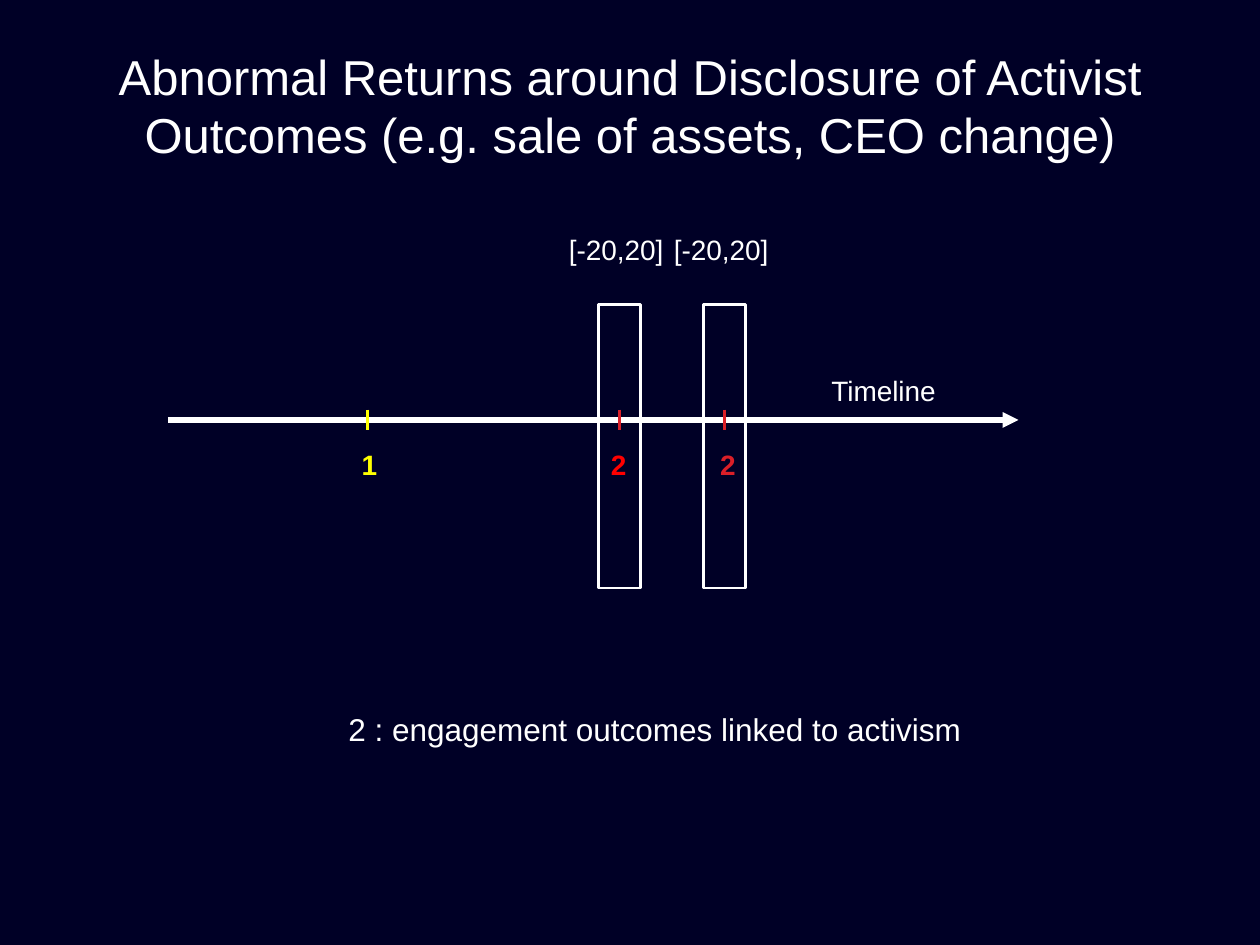
from lxml.etree import SubElement
from pptx import Presentation
from pptx.dml.color import RGBColor
from pptx.enum.shapes import MSO_CONNECTOR, MSO_SHAPE
from pptx.enum.text import MSO_ANCHOR, MSO_AUTO_SIZE, PP_ALIGN
from pptx.oxml.ns import qn
from pptx.util import Inches, Pt

COLORS = {"background": "000026", "white": "FFFFFF", "yellow": "FFFF00",
          "red": "FF0000", "crimson": "DA1F28"}
FONT = "Arial"


def grid(n):
    """Length of n grid units; the slide is 120 columns by 90 rows."""
    return Inches(n / 12)


def rgb(name):
    return RGBColor.from_string(COLORS[name])


def format_text(tf, text, size=16, color="white", bold=False, align=PP_ALIGN.LEFT):
    p = tf.paragraphs[0]
    p.alignment = align
    r = p.add_run()
    r.text = text
    r.font.name = FONT
    r.font.size = Pt(size)
    r.font.bold = bold
    r.font.color.rgb = rgb(color)


def add_text(s, text, x, y, w, h=4.4, wrap=False, **fmt):
    tf = s.shapes.add_textbox(*map(grid, (x, y, w, h))).text_frame
    tf.word_wrap = wrap
    tf.auto_size = MSO_AUTO_SIZE.SHAPE_TO_FIT_TEXT
    format_text(tf, text, **fmt)


def add_line(s, x1, y1, x2, y2, color, width, arrow=False):
    line = s.shapes.add_connector(MSO_CONNECTOR.STRAIGHT, *map(grid, (x1, y1, x2, y2)))
    line.line.color.rgb = rgb(color)
    line.line.width = Pt(width)
    if arrow:
        SubElement(line.line._get_or_add_ln(), qn("a:tailEnd"), type="triangle")
    SubElement(line._element.spPr, qn("a:effectLst"))


def add_title(s, text, x, y, w, h):
    title = s.shapes.title
    title.left, title.top, title.width, title.height = map(grid, (x, y, w, h))
    tf = title.text_frame
    tf.word_wrap = True
    tf.vertical_anchor = MSO_ANCHOR.MIDDLE
    format_text(tf, text, size=28, align=PP_ALIGN.CENTER)


def add_event(s, number, x, y, tick, color, shift=-2, align=PP_ALIGN.LEFT):
    """Tick centred on (x, y) with its number below, offset by shift."""
    add_line(s, x, y - 1, x, y + 1, tick, 2)
    add_text(s, number, x + shift, y + 2, 4, color=color, bold=True, align=align)


def add_window(s, label, x, top, h):
    """Event window centred on x, with its day range above."""
    sp = s.shapes.add_shape(MSO_SHAPE.RECTANGLE, *map(grid, (x - 2, top, 4, h)))
    sp.shadow.inherit = False
    sp.fill.background()
    sp.line.color.rgb = rgb("white")
    sp.line.width = Pt(1.25)
    add_text(s, label, x - 6, top - 7.4, 11.5)


def add_timeline(s, x, y, w, h):
    axis = y + 11
    add_line(s, x, axis, x + w, axis, "white", 3, arrow=True)
    add_event(s, "1", x + 19, axis, "yellow", "yellow", -1.9, PP_ALIGN.RIGHT)
    add_event(s, "2", x + 43, axis, "crimson", "red")
    add_event(s, "2", x + 53, axis, "crimson", "crimson", -1.6)
    for offset in (43, 53):
        add_window(s, "[-20,20]", x + offset, y, h)
    add_text(s, "Timeline", x + 62, axis - 5, 12.5)


def main():
    prs = Presentation()
    prs.slide_width, prs.slide_height = grid(120), grid(90)
    s = prs.slides.add_slide(prs.slide_layouts[5])
    s.background.fill.solid()
    s.background.fill.fore_color.rgb = rgb("background")
    add_title(s, "Abnormal Returns around Disclosure of Activist Outcomes "
                 "(e.g. sale of assets, CEO change)", 9, 3, 102, 14)
    add_timeline(s, 16, 29, 81, 27)
    add_text(s, "2 : engagement outcomes linked to activism", 32, 67, 62, 4.8,
             wrap=True, size=18)
    prs.save("out.pptx")


if __name__ == "__main__":
    main()
